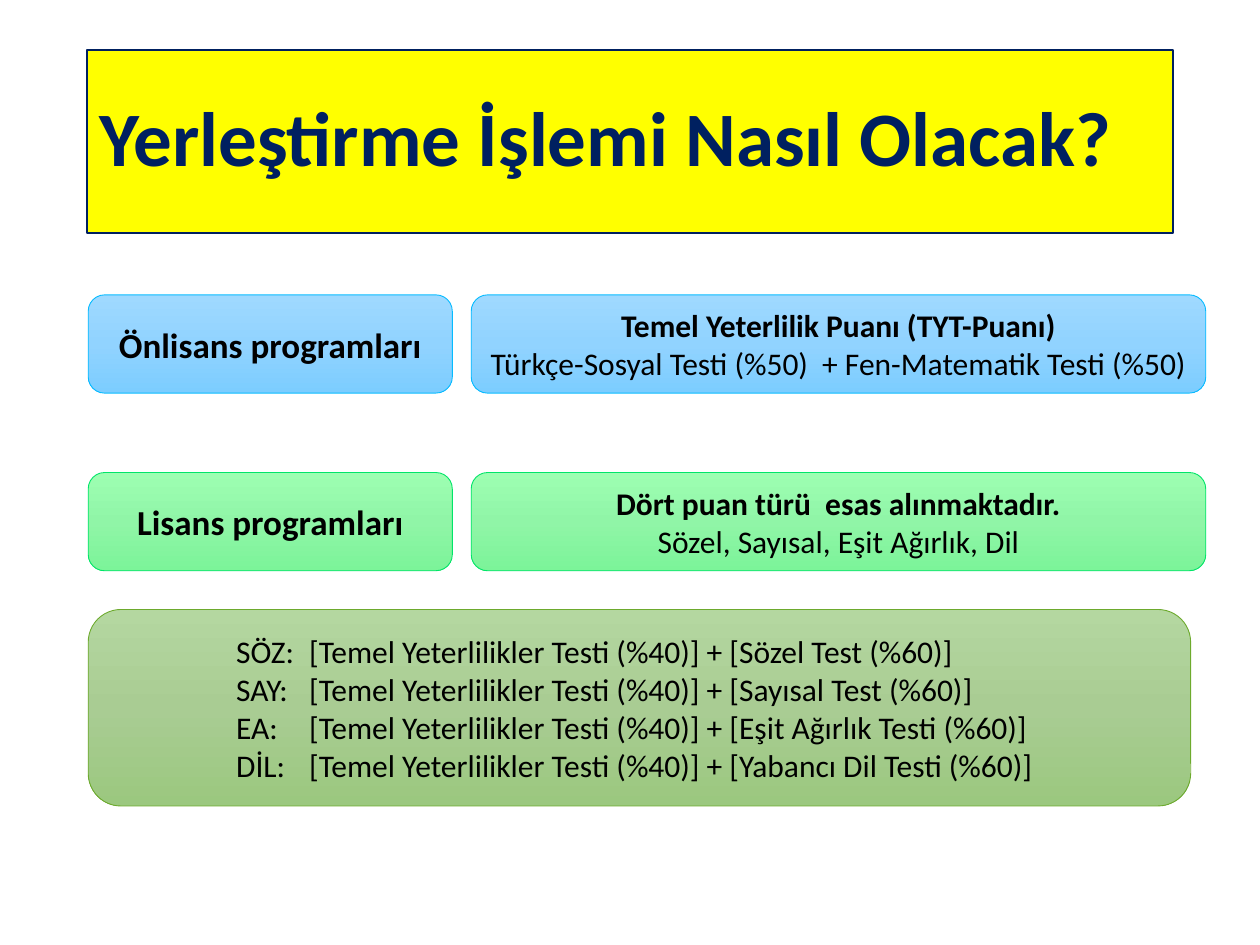
from copy import deepcopy
from dataclasses import dataclass

from pptx import Presentation
from pptx.dml.color import RGBColor
from pptx.enum.shapes import MSO_SHAPE
from pptx.enum.text import MSO_ANCHOR, PP_ALIGN
from pptx.oxml.ns import qn
from pptx.util import Emu, Inches, Pt

WIDE, HIGH = Inches(10), Inches(7.5)
FONT = "Calibri"
HEX = {"navy": "002060", "yellow": "FFFF00", "black": "000000"}
# Three gradient stops from top to bottom, then the outline
TONES = {
    "blue": ("9FD9FF", "91D3FF", "7CCDFF", "05BBFF"),
    "mint": ("9DFEB2", "90F5A7", "7CF499", "01E569"),
    "leaf": ("B4D7A0", "A9CC93", "9BC87F", "6DAA2D"),
}
# Shares of the slide in percent: (start, extent)
LABEL, RULE, FULL = (7, 28.9), (37.4, 58.3), (7, 87.5)


@dataclass
class Line:
    text: str
    size: int = 18
    bold: bool = False


@dataclass
class Card:
    col: tuple[float, float]
    row: tuple[float, float]
    tone: str
    lines: list[Line]
    listed: bool = False


def rgb(code: str) -> RGBColor:
    return RGBColor.from_string(code)


def place(shape, col: tuple[float, float], row: tuple[float, float]) -> None:
    shape.left, shape.width = (Emu(int(WIDE * part / 100)) for part in col)
    shape.top, shape.height = (Emu(int(HIGH * part / 100)) for part in row)


def write(par, line: Line, ink: str) -> None:
    run = par.add_run()
    run.text = line.text
    font = run.font
    font.name, font.size, font.bold = FONT, Pt(line.size), line.bold
    font.color.rgb = rgb(HEX[ink])


def shade(shape, tone: str) -> None:
    """Fill with a three-stop downward gradient and draw a thin outline."""
    *stops, edge = TONES[tone]
    fill = shape.fill
    fill.gradient()
    fill.gradient_angle = 270
    first = shape._element.spPr.find(".//" + qn("a:gs"))
    first.addnext(deepcopy(first))
    for stop, code, spot in zip(fill.gradient_stops, stops, (0, 0.5, 1)):
        stop.color.rgb = rgb(code)
        stop.position = spot
    shape.line.color.rgb = rgb(edge)
    shape.line.width = Pt(0.5)
    shape.shadow.inherit = False


def hang(par) -> None:
    """Indent the score name and hang its formula after the tab."""
    props = par._p.get_or_add_pPr()
    props.set("marL", str(Inches(1.58)))
    props.set("indent", str(Inches(-0.58)))


def draw_card(slide, card: Card) -> None:
    shape = slide.shapes.add_shape(MSO_SHAPE.ROUNDED_RECTANGLE, 0, 0, 0, 0)
    place(shape, card.col, card.row)
    shade(shape, card.tone)
    frame = shape.text_frame
    frame.word_wrap = True
    frame.vertical_anchor = MSO_ANCHOR.MIDDLE
    for i, line in enumerate(card.lines):
        par = frame.add_paragraph() if i else frame.paragraphs[0]
        par.alignment = PP_ALIGN.LEFT if card.listed else PP_ALIGN.CENTER
        if card.listed:
            hang(par)
        write(par, line, "black")


def draw_title(slide, text: str) -> None:
    title = slide.shapes.title
    place(title, (6.9, 86.2), (5.33, 19.33))
    title.fill.solid()
    title.fill.fore_color.rgb = rgb(HEX["yellow"])
    title.line.color.rgb = rgb(HEX["navy"])
    title.line.width = Pt(1)
    title.text_frame.vertical_anchor = MSO_ANCHOR.MIDDLE
    par = title.text_frame.paragraphs[0]
    par.alignment, par.line_spacing = PP_ALIGN.LEFT, 0.9
    write(par, Line(text, 44, True), "navy")


def main() -> None:
    deck = Presentation()
    deck.slide_width, deck.slide_height = WIDE, HIGH
    slide = deck.slides.add_slide(deck.slide_layouts[5])
    draw_title(slide, "Yerleştirme İşlemi Nasıl Olacak?")

    levels = [
        (31.2, "blue", "Önlisans programları", "Temel Yeterlilik Puanı (TYT-Puanı)",
         "Türkçe-Sosyal Testi (%50)  + Fen-Matematik Testi (%50)"),
        (50, "mint", "Lisans programları", "Dört puan türü  esas alınmaktadır.",
         "Sözel, Sayısal, Eşit Ağırlık, Dil"),
    ]
    for top, tone, name, head, note in levels:
        row = (top, 10.4)
        draw_card(slide, Card(LABEL, row, tone, [Line(name, 20, True)]))
        draw_card(slide, Card(RULE, row, tone, [Line(head, bold=True), Line(note)]))

    scores = [("SÖZ", "Sözel Test"), ("SAY", "Sayısal Test"),
              ("EA", "Eşit Ağırlık Testi"), ("DİL", "Yabancı Dil Testi")]
    sums = [Line(f"{code}:\t[Temel Yeterlilikler Testi (%40)] + [{test} (%60)]")
            for code, test in scores]
    draw_card(slide, Card(FULL, (64.5, 20.8), "leaf", sums, listed=True))
    deck.save("out.pptx")


if __name__ == "__main__":
    main()
